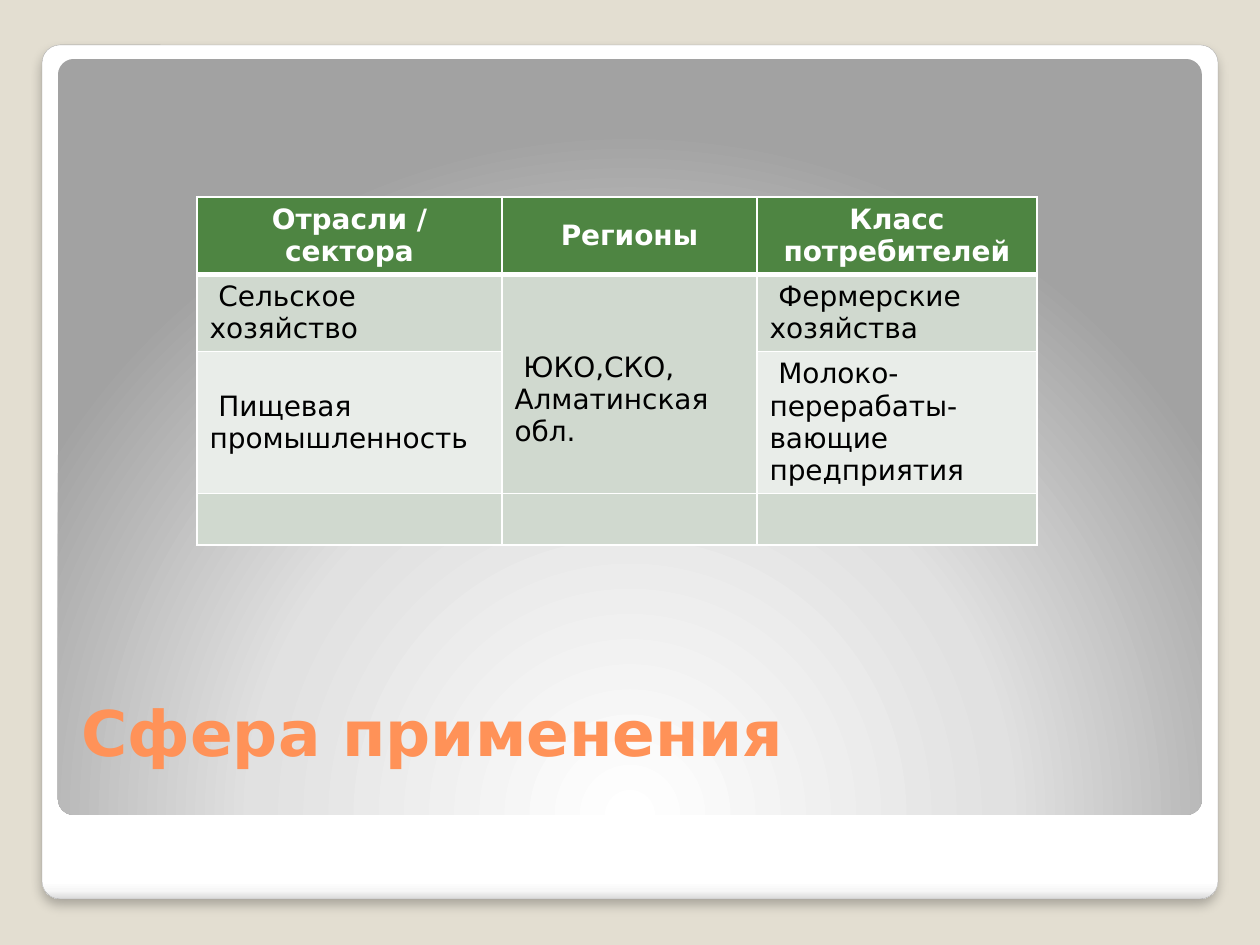
from dataclasses import dataclass

from lxml import etree
from pptx import Presentation
from pptx.dml.color import RGBColor as RGB
from pptx.enum.shapes import MSO_SHAPE as SHAPE
from pptx.enum.text import MSO_ANCHOR as ANCHOR, MSO_AUTO_SIZE as AUTO, PP_ALIGN as ALIGN
from pptx.oxml import parse_xml
from pptx.oxml.ns import nsdecls, qn
from pptx.util import Emu, Pt


@dataclass(frozen=True)
class Theme:
    font: str = "DejaVu Sans"
    back: str = "E3DED1"
    frame_line: str = "A4A4A4"
    title: str = "FF9258"
    head: str = "4E8542"
    bands: tuple = ("D0D9CF", "E9EDE9")
    white: str = "FFFFFF"
    black: str = "000000"
    title_size: int = 36
    table_size: int = 16


T = Theme()
HEADS = ["Отрасли / сектора", "Регионы", "Класс потребителей"]
ROWS = [
    [" Сельское хозяйство", " ЮКО,СКО, Алматинская обл.", " Фермерские хозяйства"],
    [" Пищевая промышленность", "", " Молоко- перерабаты-вающие предприятия"],
    ["", "", ""],
]


def px(n):
    return Emu(round(n * 914400 / 126))


def write(tf, text, size, color, bold=False, align=ALIGN.LEFT):
    p = tf.paragraphs[0]
    p.alignment = align
    r = p.add_run()
    r.text = text
    r.font.name = T.font
    r.font.size = Pt(size)
    r.font.bold = bold
    r.font.color.rgb = RGB.from_string(color)


def gradient(sp, stops, direction):
    gs = "".join(f'<a:gs pos="{pos * 1000}"><a:srgbClr val="{c}"/></a:gs>' for pos, c in stops)
    fill = parse_xml(f'<a:gradFill {nsdecls("a")} rotWithShape="1">'
                     f"<a:gsLst>{gs}</a:gsLst>{direction}</a:gradFill>")
    sp._element.spPr.find(qn("a:prstGeom")).addnext(fill)


def add_panel(s, box, stops, direction):
    sp = s.shapes.add_shape(SHAPE.ROUNDED_RECTANGLE, *map(px, box))
    sp.adjustments[0] = 0.021
    sp.line.fill.background()
    sp.shadow.inherit = False
    gradient(sp, stops, direction)
    return sp


def add_backdrop(s, x, y, w, h):
    frame = add_panel(s, (x, y, w, h),
                      [(0, T.white), (98, T.white), (99, "F7F7F7"), (100, "DADADA")],
                      '<a:lin ang="5400000" scaled="0"/>')
    frame.line.color.rgb = RGB.from_string(T.frame_line)
    frame.line.width = Pt(0.16)
    effects = frame._element.spPr.find(qn("a:effectLst"))
    effects.append(parse_xml(
        f'<a:outerShdw {nsdecls("a")} blurRad="{Pt(6)}" dist="{Pt(4)}" dir="5400000" '
        f'algn="t" rotWithShape="0"><a:srgbClr val="{T.black}">'
        '<a:alpha val="25000"/></a:srgbClr></a:outerShdw>'))
    add_panel(s, (x + 16, y + 14, w - 32, h - 98),
              [(0, T.white), (55, "E1E1E1"), (100, "A2A2A2")],
              '<a:path path="circle"><a:fillToRect l="50000" t="175000" r="50000" b="-75000"/></a:path>')


def add_title(s, x, y, w, h, text):
    sp = s.shapes.title
    sp.left, sp.top, sp.width, sp.height = map(px, (x, y, w, h))
    tf = sp.text_frame
    tf.word_wrap = True
    tf.auto_size = AUTO.NONE
    tf.vertical_anchor = ANCHOR.BOTTOM
    write(tf, text, T.title_size, T.title, bold=True)
    s.shapes._spTree.append(sp._element)


def set_borders(cell, top=1, bottom=1):
    tc_pr = cell._tc.get_or_add_tcPr()
    for i, (side, width) in enumerate(zip("LRTB", (1, 1, top, bottom))):
        ln = etree.Element(qn(f"a:ln{side}"), w=str(Pt(width)))
        fill = etree.SubElement(ln, qn("a:solidFill"))
        etree.SubElement(fill, qn("a:srgbClr"), val=T.white)
        tc_pr.insert(i, ln)


def add_scope_table(s, x, y, widths, row_h):
    data = [HEADS] + ROWS
    frame = s.shapes.add_table(len(data), len(widths), px(x), px(y),
                               px(sum(widths)), px(row_h * len(data)))
    table = frame.table
    for col, w in zip(table.columns, widths):
        col.width = px(w)
    for i, texts in enumerate(data):
        table.rows[i].height = px(row_h)
        head = i == 0
        for j, text in enumerate(texts):
            cell = table.cell(i, j)
            cell.vertical_anchor = ANCHOR.MIDDLE
            cell.fill.solid()
            cell.fill.fore_color.rgb = RGB.from_string(T.head if head else T.bands[(i - 1) % 2])
            set_borders(cell, top=3 if i == 1 else 1, bottom=3 if head else 1)
            if text:
                write(cell.text_frame, text, T.table_size, T.white if head else T.black,
                      bold=head, align=ALIGN.CENTER if head else ALIGN.LEFT)
    regions = table.cell(1, 1)
    regions.merge(table.cell(2, 1))
    regions.margin_top = px(38)


def main():
    prs = Presentation()
    prs.slide_width, prs.slide_height = px(1260), px(945)
    s = prs.slides.add_slide(prs.slide_layouts[5])
    s.background.fill.solid()
    s.background.fill.fore_color.rgb = RGB.from_string(T.back)
    add_backdrop(s, 42, 45, 1176, 854)
    add_title(s, 69, 669, 1128, 106, "Сфера применения")
    add_scope_table(s, 197, 197, [305, 255, 280], 51)
    prs.save("out.pptx")


if __name__ == "__main__":
    main()
